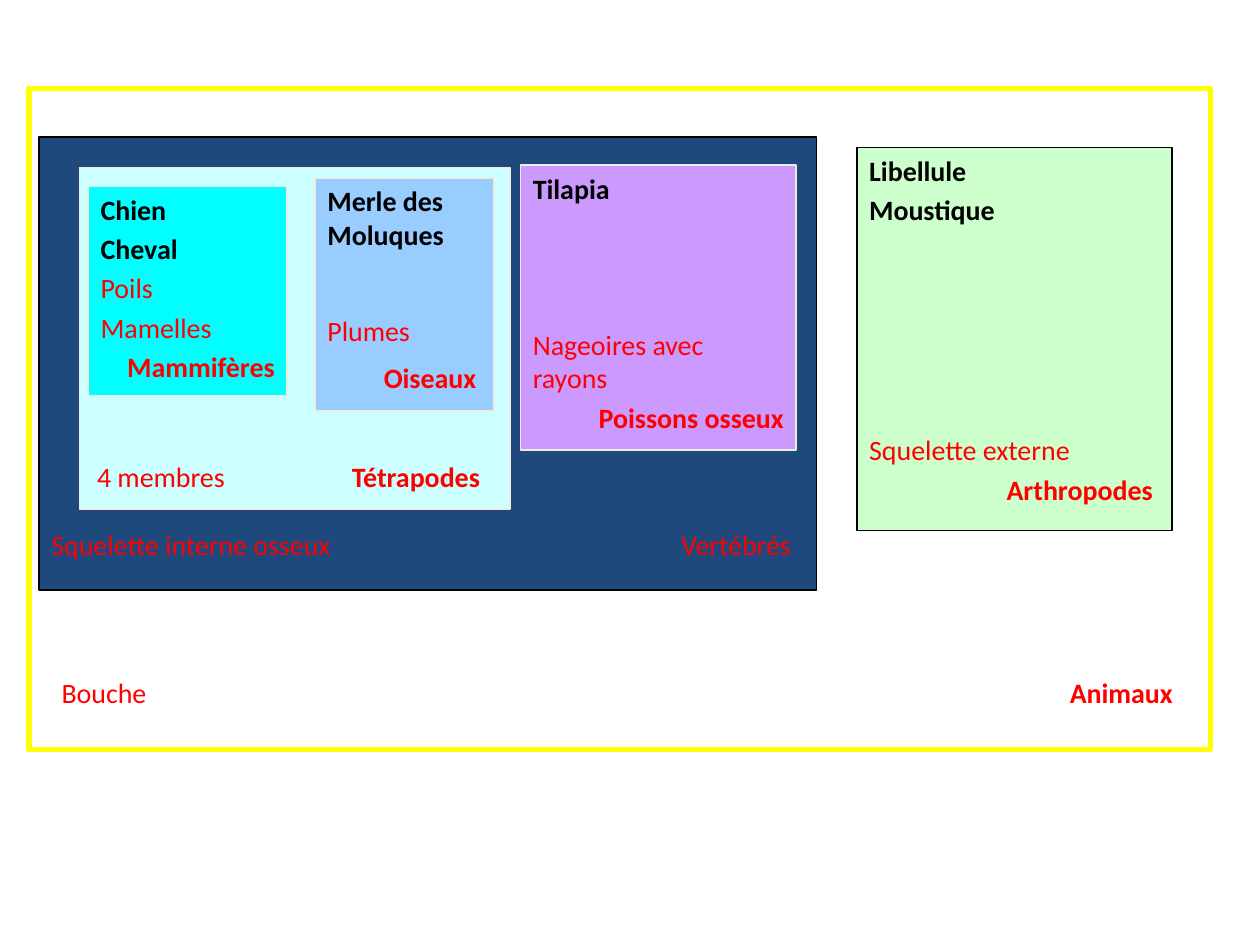
from dataclasses import dataclass

from lxml.etree import SubElement
from pptx import Presentation
from pptx.dml.color import RGBColor
from pptx.enum.shapes import MSO_SHAPE as Shape
from pptx.enum.text import MSO_ANCHOR as Anchor, PP_ALIGN as Align
from pptx.oxml.ns import qn
from pptx.util import Inches, Pt

BLACK, RED, CREAM = "000000", "FF0000", "EEECE1"


@dataclass
class Line:
    """One paragraph; an end text sits at a right-aligned tab stop."""
    text: str
    color: str = RED
    bold: bool = False
    gap: float = 3.2
    right: bool = False
    end: str = ""
    tab: float = 0
    strong: bool = True


@dataclass
class Box:
    """A nested group of animals; pads are left, right and bottom."""
    at: tuple[float, float, float, float]
    lines: list[Line]
    fill: str = ""
    edge: str = ""
    width: float = 1
    pads: tuple[float, float, float] = (0.1, 0.1, 0.05)
    low: bool = False


def name(text: str, gap: float = 3.2) -> Line:
    return Line(text, BLACK, True, gap)


def group(text: str, gap: float = 3.2) -> Line:
    return Line(text, bold=True, gap=gap, right=True)


BOXES = [
    # Vertebrates and arthropods
    Box((0.31, 1.09, 6.17, 3.59),
        [Line("Squelette interne osseux", end="Vertébrés", tab=5.87, strong=False)],
        "1F497D", BLACK, pads=(0.1, 0.1, 0.23), low=True),
    Box((6.8, 1.17, 2.5, 3.04),
        [name("Libellule"), name("Moustique"),
         Line("Squelette externe", gap=118), group("Arthropodes")],
        "CCFFCC", BLACK, pads=(0.1, 0.15, 0.05)),
    # Inside the vertebrates
    Box((0.63, 1.33, 3.42, 2.71),
        [Line("4 membres", end="Tétrapodes", tab=3.04)],
        "CCFFFF", CREAM, pads=(0.14, 0.1, 0.13), low=True),
    Box((4.13, 1.31, 2.19, 2.26),
        [name("Tilapia"), Line("Nageoires avec rayons", gap=70),
         group("Poissons osseux")],
        "CC99FF", CREAM),
    # Inside the tetrapods
    Box((0.7, 1.48, 1.58, 1.66),
        [name("Chien"), name("Cheval"), Line("Poils"), Line("Mamelles"),
         group("Mammifères")],
        "00FFFF", CREAM),
    Box((2.5, 1.41, 1.42, 1.85),
        [name("Merle des Moluques"), Line("Plumes", gap=35.5),
         group("Oiseaux", 8)],
        "99CCFF", CREAM, pads=(0.1, 0.14, 0.05)),
    # All animals
    Box((0.23, 0.7, 9.38, 5.25), [], edge="FFFF00", width=3),
]
CAPTION = Box((0.39, 5.31, 9.1, 0.37),
              [Line("Bouche", end="Animaux", tab=8.82)])


def rgb(code: str) -> RGBColor:
    return RGBColor.from_string(code)


def add_run(para, text: str, color: str, bold: bool) -> None:
    run = para.add_run()
    run.text = text
    font = run.font
    font.name, font.size, font.bold = "Calibri", Pt(16), bold
    font.color.rgb = rgb(color)


def write(shape, box: Box) -> None:
    frame = shape.text_frame
    frame.word_wrap = True
    frame.vertical_anchor = Anchor.BOTTOM if box.low else Anchor.TOP
    left, right, base = box.pads
    frame.margin_left, frame.margin_right = Inches(left), Inches(right)
    frame.margin_top, frame.margin_bottom = Inches(0.05), Inches(base)
    for i, line in enumerate(box.lines):
        para = frame.add_paragraph() if i else frame.paragraphs[0]
        para.alignment = Align.RIGHT if line.right else Align.LEFT
        para.space_before = Pt(line.gap if i else 0)
        add_run(para, line.text, line.color, line.bold)
        if line.end:
            stops = SubElement(para._p.get_or_add_pPr(), qn("a:tabLst"))
            SubElement(stops, qn("a:tab"), pos=str(Inches(line.tab)), algn="r")
            add_run(para, "\t", line.color, False)
            add_run(para, line.end, line.color, line.strong)


def draw(slide, box: Box) -> None:
    shape = slide.shapes.add_shape(Shape.RECTANGLE, *map(Inches, box.at))
    shape.shadow.inherit = False
    if box.fill:
        shape.fill.solid()
        shape.fill.fore_color.rgb = rgb(box.fill)
    else:
        shape.fill.background()
    shape.line.color.rgb = rgb(box.edge)
    shape.line.width = Pt(box.width)
    write(shape, box)


def main() -> None:
    deck = Presentation()
    deck.slide_width, deck.slide_height = Inches(10), Inches(7.5)
    slide = deck.slides.add_slide(deck.slide_layouts[6])
    for box in BOXES:
        draw(slide, box)
    # Shared trait of all animals
    write(slide.shapes.add_textbox(*map(Inches, CAPTION.at)), CAPTION)
    deck.save("out.pptx")


if __name__ == "__main__":
    main()
